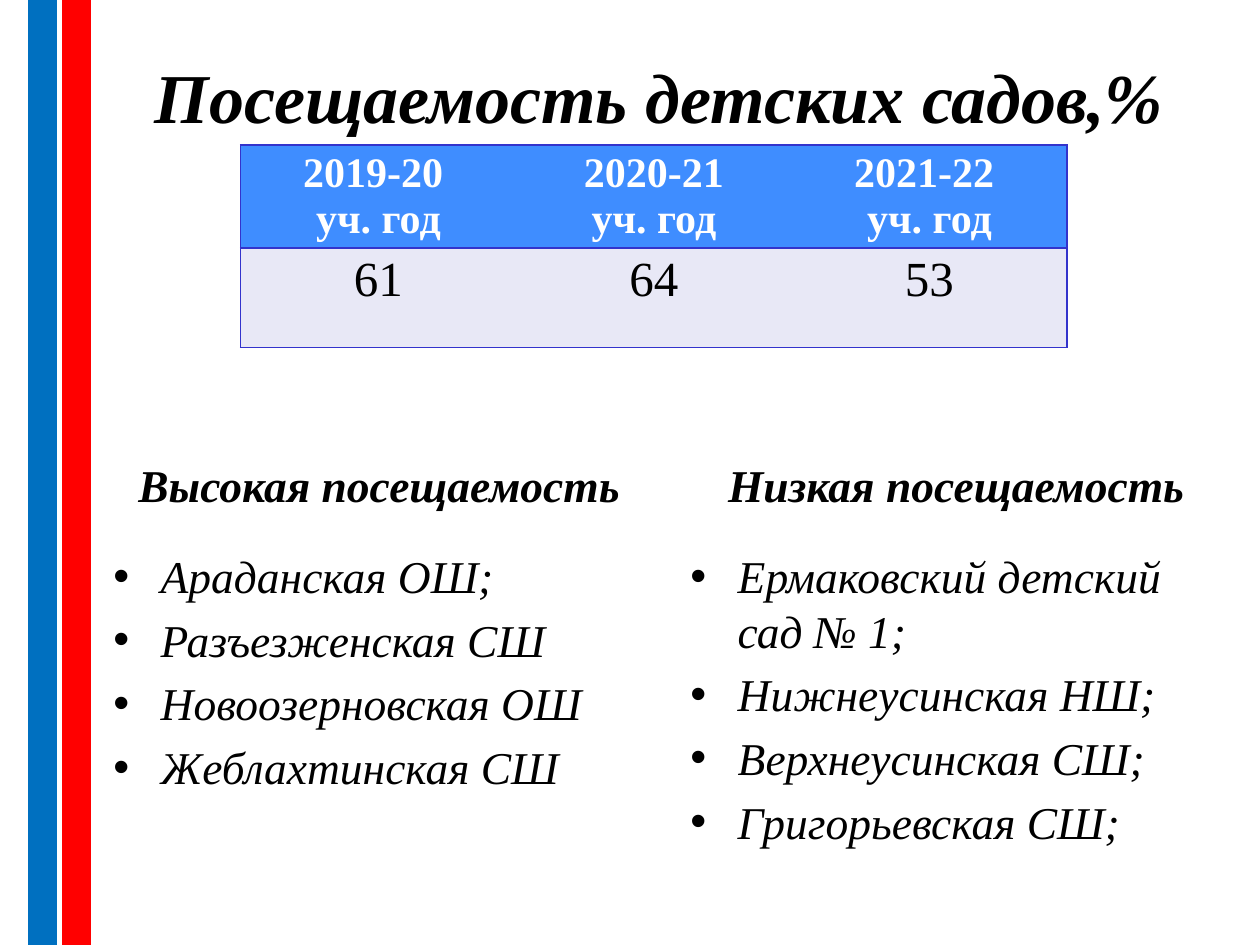
"""Build a slide on kindergarten attendance: a yearly table and two lists."""
from dataclasses import dataclass

from lxml.etree import SubElement
from pptx import Presentation
from pptx.dml.color import RGBColor
from pptx.enum.shapes import MSO_SHAPE as Shape
from pptx.enum.text import MSO_ANCHOR as Anchor, MSO_AUTO_SIZE as Fit, PP_ALIGN as Align
from pptx.oxml.ns import qn
from pptx.util import Inches, Pt

TITLE = "Посещаемость детских садов,%"
YEARS = ["2019-20 \nуч. год", "2020-21\nуч. год", "2021-22 \nуч. год"]
ATTENDANCE = ["61", "64", "53"]
GROUPS = [
    ("Высокая посещаемость",
     ["Араданская ОШ;", "Разъезженская СШ", "Новоозерновская ОШ", "Жеблахтинская СШ"]),
    ("Низкая посещаемость",
     ["Ермаковский детский сад № 1;", "Нижнеусинская НШ;", "Верхнеусинская СШ;",
      "Григорьевская СШ;"]),
]


@dataclass(frozen=True)
class Theme:
    font: str = "Times New Roman"
    ink: str = "000000"
    paper: str = "FFFFFF"
    stripe_blue: str = "0070C0"
    stripe_red: str = "FF0000"
    header: str = "3F8DFF"
    cell: str = "E8E8F6"
    border: str = "3333CC"
    title_size: int = 40
    list_size: int = 26
    header_size: int = 24
    value_size: int = 28


THEME = Theme()
COLUMNS, ROWS = 100, 75
GROUP_LEFT, GROUP_STEP, GROUP_WIDTH = 8, 45.8, 44.2
STRIPES = [(0, 2.4, THEME.paper), (2.4, 2, THEME.stripe_blue), (5.1, 2, THEME.stripe_red)]

deck = Presentation()
deck.slide_width, deck.slide_height = Inches(10), Inches(7.5)


def grid(left, top, width, height):
    across, down = deck.slide_width / COLUMNS, deck.slide_height / ROWS
    return [round(n) for n in (left * across, top * down, width * across, height * down)]


def place(shape, *area):
    shape.left, shape.top, shape.width, shape.height = grid(*area)


def write(frame, lines, size, color=THEME.ink, bold=False, italic=False, align=Align.CENTER):
    frame.text = "\n".join(lines)
    for index, para in enumerate(frame.paragraphs):
        para.alignment = align
        if index == 0:
            para.space_before = Pt(0)
        font = para.font
        font.name, font.size, font.bold, font.italic = THEME.font, Pt(size), bold, italic
        font.color.rgb = RGBColor.from_string(color)


def fill_box(box, area, lines, size, anchor, **style):
    place(box, *area)
    frame = box.text_frame
    frame.word_wrap, frame.auto_size, frame.vertical_anchor = True, Fit.NONE, anchor
    write(frame, lines, size, **style)


def add_stripe(page, left, width, color):
    stripe = page.shapes.add_shape(Shape.RECTANGLE, *grid(left, 0, width, ROWS))
    stripe.shadow.inherit = False
    stripe.fill.solid()
    stripe.fill.fore_color.rgb = stripe.line.color.rgb = RGBColor.from_string(color)
    stripe.line.width = Pt(2)


def set_borders(cell, sides):
    properties = cell._tc.get_or_add_tcPr()
    for side in "LRTB":
        line = SubElement(properties, qn(f"a:ln{side}"), w=str(Pt(1)))
        if side in sides:
            paint = SubElement(line, qn("a:solidFill"))
            SubElement(paint, qn("a:srgbClr"), val=THEME.border)
        else:
            SubElement(line, qn("a:noFill"))


def add_attendance(page):
    styles = [(YEARS, THEME.header, THEME.header_size, THEME.paper, True),
              (ATTENDANCE, THEME.cell, THEME.value_size, THEME.ink, False)]
    area = grid(19.1, 11.5, 65.6, 15.8)
    table = page.shapes.add_table(len(styles), len(YEARS), *area).table
    table.horz_banding = False
    for row, (texts, back, size, color, bold) in enumerate(styles):
        for column, text in enumerate(texts):
            cell = table.cell(row, column)
            cell.margin_top = cell.margin_bottom = Inches(0.04)
            left = "L" if column == 0 else ""
            right = "R" if column == len(texts) - 1 else ""
            set_borders(cell, "TB" + left + right)
            cell.fill.solid()
            cell.fill.fore_color.rgb = RGBColor.from_string(back)
            write(cell.text_frame, text.split("\n"), size, color, bold)


def main():
    page = deck.slides.add_slide(deck.slide_layouts.get_by_name("Comparison"))
    title, *boxes = page.placeholders
    fill_box(title, (7.3, 1.3, 90, 12.5), [TITLE], THEME.title_size, Anchor.MIDDLE,
             bold=True, italic=True)
    for index, (heading, places) in enumerate(GROUPS):
        left = GROUP_LEFT + index * GROUP_STEP
        heading_box, list_box = boxes[2 * index:2 * index + 2]
        fill_box(heading_box, (left, 35.1, GROUP_WIDTH, 6), [heading], THEME.list_size,
                 Anchor.BOTTOM, bold=True, italic=True)
        fill_box(list_box, (left, 43, GROUP_WIDTH, 29), places, THEME.list_size,
                 Anchor.TOP, italic=True, align=Align.LEFT)
    for stripe in STRIPES:
        add_stripe(page, *stripe)
    add_attendance(page)
    deck.save("out.pptx")


if __name__ == "__main__":
    main()
